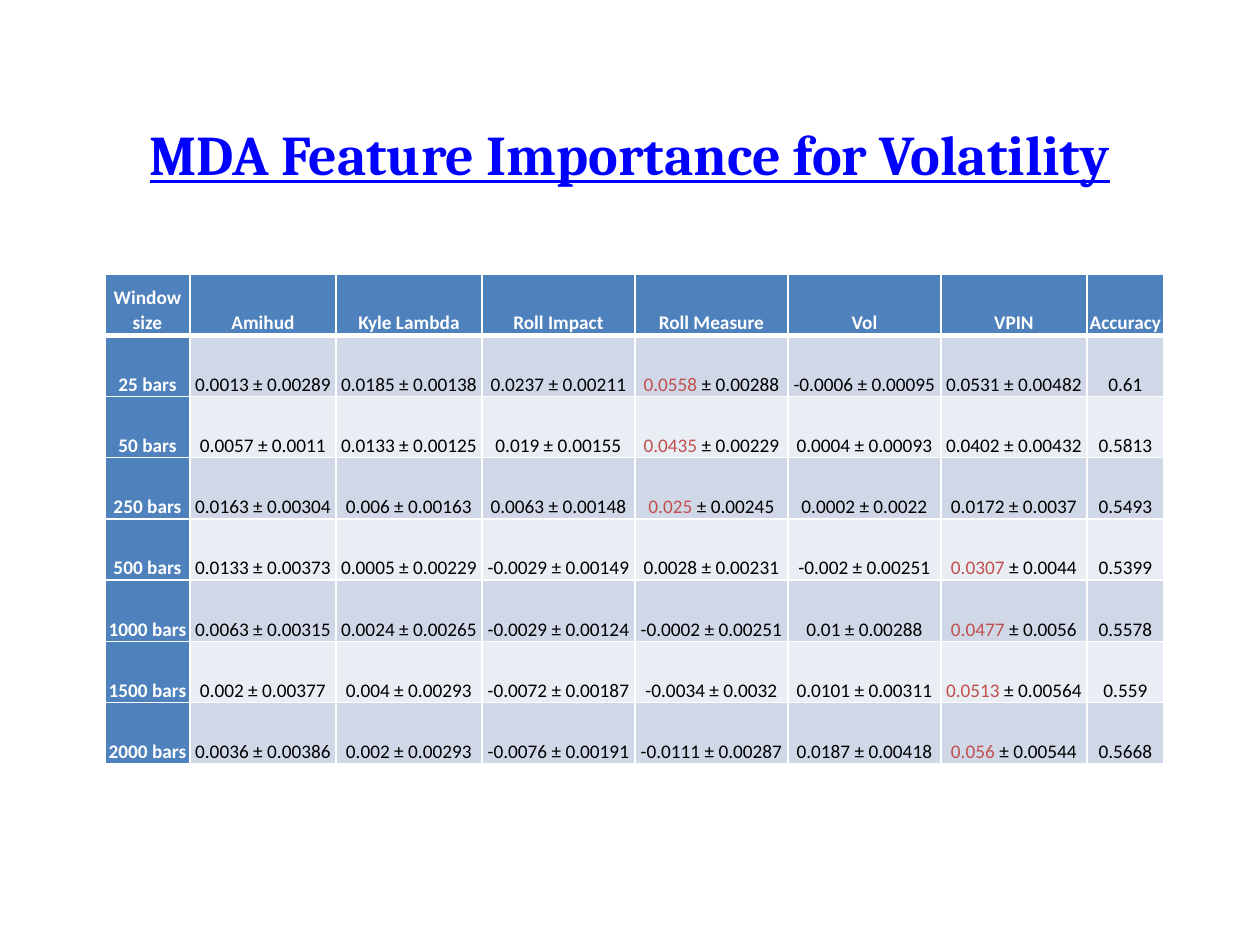
from dataclasses import dataclass

from lxml.etree import SubElement
from pptx import Presentation
from pptx.dml.color import RGBColor
from pptx.enum.text import MSO_ANCHOR as Anchor, PP_ALIGN as Align
from pptx.oxml.ns import qn
from pptx.util import Pt

EMU_PER_PX = 914400 / 126


@dataclass(frozen=True)
class Theme:
    title_font: str = "Cambria"
    body_font: str = "Calibri"
    title_size: int = 32
    body_size: int = 11
    title: str = "0000FF"
    header: str = "4F81BD"
    bands: tuple = ("D0D8E8", "E9EDF4")
    light: str = "FFFFFF"
    text: str = "000000"
    best: str = "C0504D"


THEME = Theme()
HEADINGS = ["Window size", "Amihud", "Kyle Lambda", "Roll Impact",
            "Roll Measure", "Vol", "VPIN", "Accuracy"]
COL_WIDTHS = [85, 146, 146, 153, 153, 153, 146, 77]
RESULTS = [
    ["25 bars", "0.0013 ± 0.00289", "0.0185 ± 0.00138", "0.0237 ± 0.00211",
     "0.0558 ± 0.00288", "-0.0006 ± 0.00095", "0.0531 ± 0.00482", "0.61"],
    ["50 bars", "0.0057 ± 0.0011", "0.0133 ± 0.00125", "0.019 ± 0.00155",
     "0.0435 ± 0.00229", "0.0004 ± 0.00093", "0.0402 ± 0.00432", "0.5813"],
    ["250 bars", "0.0163 ± 0.00304", "0.006 ± 0.00163", "0.0063 ± 0.00148",
     "0.025 ± 0.00245", "0.0002 ± 0.0022", "0.0172 ± 0.0037", "0.5493"],
    ["500 bars", "0.0133 ± 0.00373", "0.0005 ± 0.00229", "-0.0029 ± 0.00149",
     "0.0028 ± 0.00231", "-0.002 ± 0.00251", "0.0307 ± 0.0044", "0.5399"],
    ["1000 bars", "0.0063 ± 0.00315", "0.0024 ± 0.00265", "-0.0029 ± 0.00124",
     "-0.0002 ± 0.00251", "0.01 ± 0.00288", "0.0477 ± 0.0056", "0.5578"],
    ["1500 bars", "0.002 ± 0.00377", "0.004 ± 0.00293", "-0.0072 ± 0.00187",
     "-0.0034 ± 0.0032", "0.0101 ± 0.00311", "0.0513 ± 0.00564", "0.559"],
    ["2000 bars", "0.0036 ± 0.00386", "0.002 ± 0.00293", "-0.0076 ± 0.00191",
     "-0.0111 ± 0.00287", "0.0187 ± 0.00418", "0.056 ± 0.00544", "0.5668"],
]


def px(n):
    return round(n * EMU_PER_PX)


def set_attrs(obj, values):
    for name, value in values.items():
        setattr(obj, name, value)


def add_run(p, text, color, **font):
    r = p.add_run()
    r.text = text
    r.font.color.rgb = RGBColor.from_string(color)
    set_attrs(r.font, font)


def add_title(slide, box, text):
    tf = slide.shapes.add_textbox(*map(px, box)).text_frame
    set_attrs(tf, dict(word_wrap=True, vertical_anchor=Anchor.MIDDLE))
    p = tf.paragraphs[0]
    p.alignment = Align.CENTER
    add_run(p, text, THEME.title, name=THEME.title_font,
            size=Pt(THEME.title_size), bold=True, underline=True)


def add_borders(cell, widths):
    """Draw light borders; widths maps a side (L, R, T, B) to points."""
    tc_pr = cell._tc.get_or_add_tcPr()
    for side, width in widths.items():
        ln = SubElement(tc_pr, qn(f"a:ln{side}"), w=str(Pt(width)))
        fill = SubElement(ln, qn("a:solidFill"))
        SubElement(fill, qn("a:srgbClr"), val=THEME.light)


def fill_cell(cell, parts, fill, bold, borders):
    """Style a cell and write its (text, colour) parts."""
    add_borders(cell, borders)
    cell.fill.solid()
    cell.fill.fore_color.rgb = RGBColor.from_string(fill)
    set_attrs(cell, dict(margin_left=px(1), margin_right=px(1),
                         margin_top=px(1), margin_bottom=0,
                         vertical_anchor=Anchor.BOTTOM))
    p = cell.text_frame.paragraphs[0]
    set_attrs(p, dict(alignment=Align.CENTER, line_spacing=1.07,
                      space_after=Pt(8)))
    for text, color in parts:
        add_run(p, text, color, name=THEME.body_font,
                size=Pt(THEME.body_size), bold=bold)


def mean(entry):
    return float(entry.split()[0])


def add_results_table(slide, box, headings, results, col_widths):
    """Add the table, marking the largest feature mean of each row."""
    rows = [headings, *results]
    table = slide.shapes.add_table(len(rows), len(headings),
                                   *map(px, box)).table
    set_attrs(table, dict(first_row=True, first_col=True, horz_banding=False))
    for col, width in zip(table.columns, col_widths):
        col.width = px(width)
    for i, row in enumerate(rows):
        best = max(row[1:-1], key=mean) if i else None
        for j, text in enumerate(row):
            is_heading = i == 0 or j == 0
            parts = [(text, THEME.light if is_heading else THEME.text)]
            if text == best:
                value, error = text.split(" ", 1)
                parts = [(value, THEME.best), (f" {error}", THEME.text)]
            fill = THEME.header if is_heading else THEME.bands[(i - 1) % 2]
            borders = dict(L=1, R=1, T=3 if i == 1 else 1,
                           B=3 if i == 0 else 1)
            fill_cell(table.cell(i, j), parts, fill, is_heading, borders)


def main():
    prs = Presentation()
    set_attrs(prs, dict(slide_width=px(1260), slide_height=px(945)))
    slide = prs.slides.add_slide(prs.slide_layouts[6])
    add_title(slide, (63, 110, 1134, 87), "MDA Feature Importance for Volatility")
    add_results_table(slide, (105, 274, sum(COL_WIDTHS), 490),
                      HEADINGS, RESULTS, COL_WIDTHS)
    prs.save("out.pptx")


if __name__ == "__main__":
    main()
